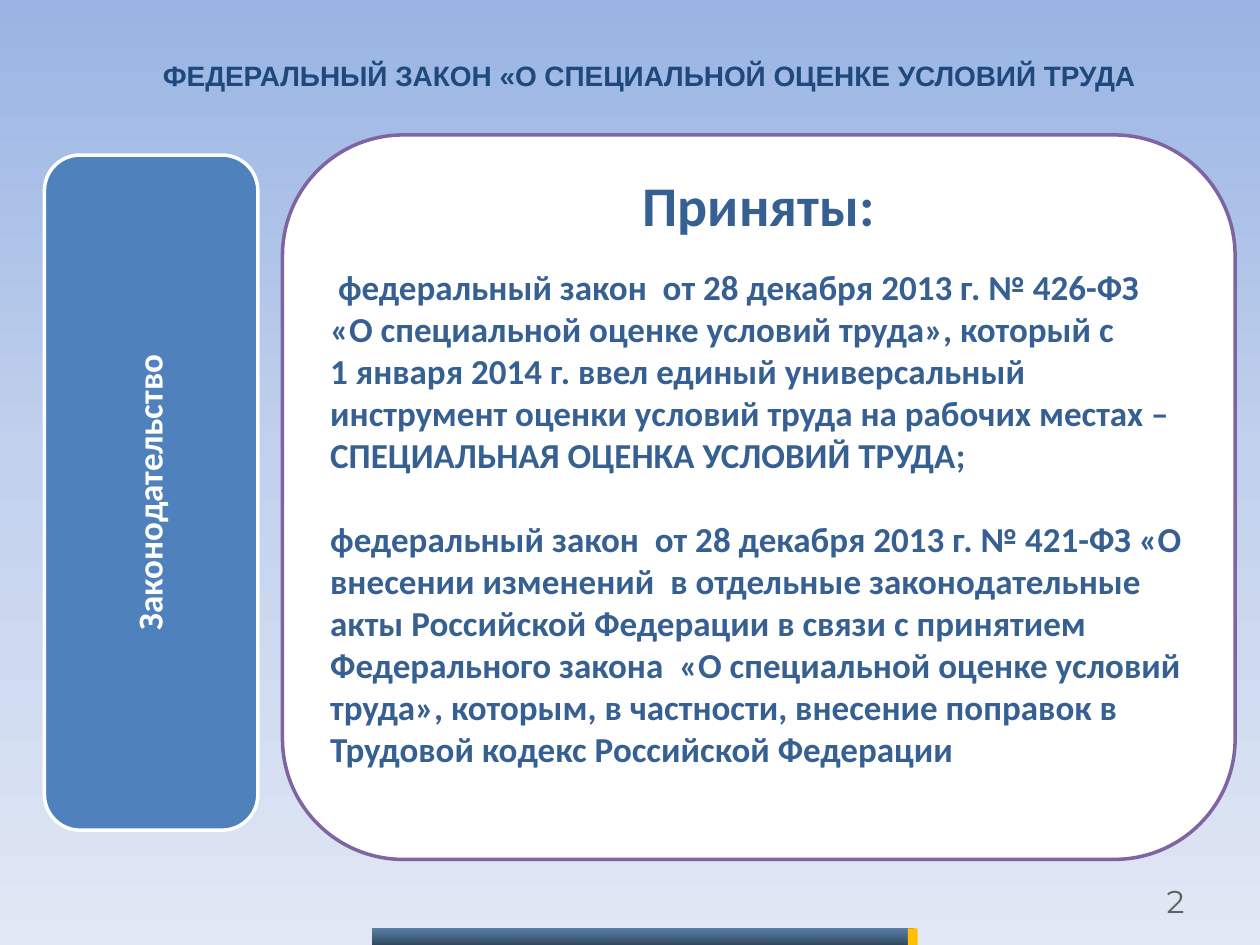
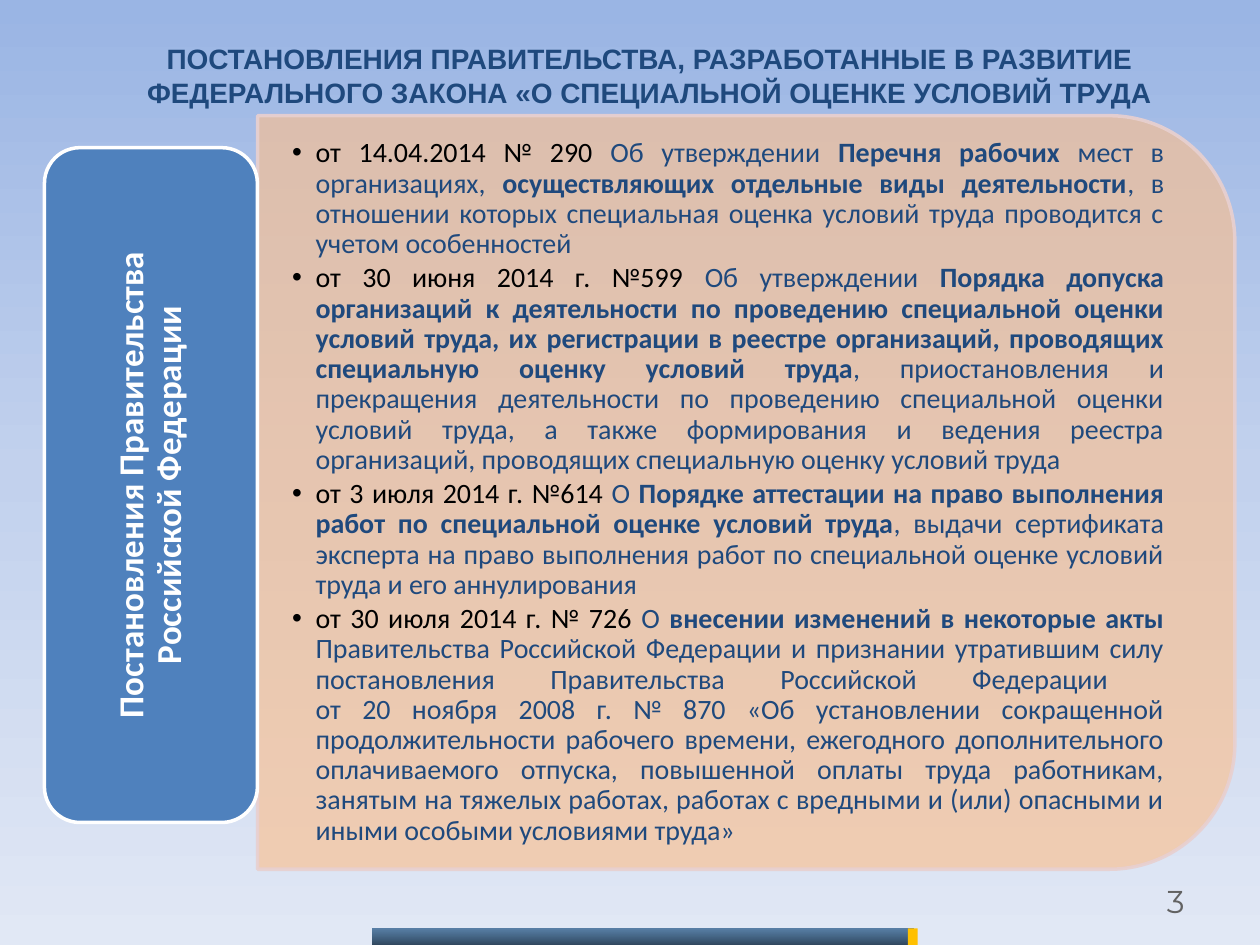
import copy

import pptx
import pptx.util
import pptx.dml.color
import pptx.enum.shapes
import pptx.enum.text
import pptx.oxml.ns
from lxml import etree

Pt = pptx.util.Pt
RGBColor = pptx.dml.color.RGBColor
KIND = pptx.enum.shapes.MSO_SHAPE
ALIGN = pptx.enum.text.PP_ALIGN
ANCHOR = pptx.enum.text.MSO_ANCHOR
qn = pptx.oxml.ns.qn

SKY = [RGBColor(0x9A, 0xB5, 0xE4), RGBColor(0xC2, 0xD1, 0xED), RGBColor(0xE1, 0xE8, 0xF5)]
BAND = [RGBColor(0x00, 0x3C, 0x73), RGBColor(0x00, 0x1C, 0x35)]
GOLD = RGBColor(0xFF, 0xC0, 0x00)
NAVY = RGBColor(0x1F, 0x49, 0x7D)
STEEL = RGBColor(0x37, 0x60, 0x92)
BLUE = RGBColor(0x4F, 0x81, 0xBD)
PURPLE = RGBColor(0x80, 0x64, 0xA2)
PEACH = RGBColor(0xFA, 0xC0, 0x90)
ROSE = RGBColor(0xE8, 0xD0, 0xD0)
GREY = RGBColor(0x62, 0x62, 0x62)
WHITE = RGBColor(0xFF, 0xFF, 0xFF)
BLACK = RGBColor(0x00, 0x00, 0x00)

TITLE = (22.3, 26.1, 697.7, 33.8)
NUMBER = (643.7, 500.4, 40.3, 28.8)
FOOTER = (212.8, 530.6, 311.6, 9.4)

LAWS = [
    "федеральный закон  от 28 декабря 2013 г. № 426-ФЗ «О специальной оценке условий труда», "
    "который с\v1 января 2014 г. ввел единый универсальный инструмент оценки условий труда "
    "на рабочих местах – СПЕЦИАЛЬНАЯ ОЦЕНКА УСЛОВИЙ ТРУДА;",
    "федеральный закон  от 28 декабря 2013 г. № 421-ФЗ «О внесении изменений  в отдельные "
    "законодательные акты Российской Федерации в связи с принятием Федерального закона  "
    "«О специальной оценке условий труда», которым, в частности, внесение поправок в Трудовой "
    "кодекс Российской Федерации",
]

ACTS = [
    ("от 14.04.2014 № 290 ", "Об утверждении ",
     ["Перечня рабочих", " мест в организациях, ", "осуществляющих отдельные виды деятельности",
      ", в отношении которых специальная оценка условий труда проводится с учетом особенностей"]),
    ("от 30 июня 2014 г. №599 ", "Об утверждении ",
     ["Порядка допуска организаций к деятельности по проведению специальной оценки условий труда, "
      "их регистрации в реестре организаций, проводящих специальную оценку условий труда",
      ", приостановления и прекращения деятельности по проведению специальной оценки условий труда, "
      "а также формирования и ведения реестра организаций, проводящих специальную оценку условий труда"]),
    ("от 3 июля 2014 г. №614 ", "О ",
     ["Порядке аттестации на право выполнения работ по специальной оценке условий труда",
      ", выдачи сертификата эксперта на право выполнения работ по специальной оценке условий труда "
      "и его аннулирования"]),
    ("от 30 июля 2014 г. № 726 ", "О ",
     ["внесении изменений в некоторые акты ",
      "Правительства Российской Федерации и признании утратившим силу постановления "
      "Правительства Российской Федерации \vот 20 ноября 2008 г. № 870 «Об установлении сокращенной "
      "продолжительности рабочего времени, ежегодного дополнительного оплачиваемого отпуска, "
      "повышенной оплаты труда работникам, занятым на тяжелых работах, работах с вредными и (или) "
      "опасными и иными особыми условиями труда»"]),
]


def blend(fill, owner, tints):
    fill.gradient()
    fill.gradient_angle = 270
    stops = next(owner.iter(qn("a:gsLst")))
    for i in range(1, len(tints) - 1):
        stop = copy.deepcopy(stops[0])
        stop.set("pos", str(100000 * i // (len(tints) - 1)))
        stops.insert(i, stop)
    for stop, tint in zip(fill.gradient_stops, tints):
        stop.color.rgb = tint


def fade(shape, *parts):
    for tint, part in zip(shape.element.spPr.iter(qn("a:srgbClr")), parts):
        etree.SubElement(tint, qn("a:alpha")).set("val", str(part * 1000))


def block(slide, kind, box, fill=None, line=None):
    shape = slide.shapes.add_shape(kind, *map(Pt, box))
    shape.shadow.inherit = False
    if fill is not None:
        shape.fill.solid()
        shape.fill.fore_color.rgb = fill
    if line is None:
        shape.line.fill.background()
    else:
        shape.line.color.rgb = line
        shape.line.width = Pt(2)
    return shape


def style(run, size, color, bold=False, face="Calibri"):
    run.font.name = face
    run.font.size = Pt(size)
    run.font.bold = bold
    run.font.color.rgb = color


def indent(para, left, first):
    props = para._p.get_or_add_pPr()
    props.set("marL", str(Pt(left)))
    props.set("indent", str(Pt(first)))
    return props


def label(slide, box, text, align, *look):
    shape = slide.shapes.add_textbox(*map(Pt, box))
    frame = shape.text_frame
    frame.word_wrap = True
    frame.vertical_anchor = ANCHOR.MIDDLE
    frame.text = text
    para = frame.paragraphs[0]
    para.alignment = align
    for run in para.runs:
        style(run, *look)
    return shape


def footer(slide, box):
    x, y, w, h = box
    band = block(slide, KIND.RECTANGLE, (x, y, w - 2.2, h))
    blend(band.fill, band.element, BAND)
    fade(band, 60, 80)
    block(slide, KIND.RECTANGLE, (x + w - 5.6, y, 5.6, h), GOLD)


def base(deck, title, number):
    slide = deck.slides.add_slide(deck.slide_layouts[6])
    blend(slide.background.fill, slide.element, SKY)
    num = label(slide, NUMBER, str(number), ALIGN.RIGHT, 18, GREY, False, "Montserrat")
    num.text_frame.paragraphs[0].space_before = Pt(3.6)
    label(slide, TITLE, title, ALIGN.CENTER, 16, NAVY, True, "Arial")
    footer(slide, FOOTER)
    return slide


def topic(slide, box, text):
    x, y, w, h = box
    block(slide, KIND.ROUNDED_RECTANGLE, box, BLUE, WHITE)
    inner = (x + 6, y + 6, w - 12, h - 12)
    shape = label(slide, inner, text, ALIGN.CENTER, 20, WHITE, True)
    frame = shape.text_frame
    frame.margin_left = frame.margin_right = Pt(6)
    frame.margin_top = frame.margin_bottom = Pt(3)
    frame.paragraphs[0].line_spacing = 0.9
    shape.element.txBody.bodyPr.set("vert", "vert270")


def laws(slide, box):
    frame = block(slide, KIND.ROUNDED_RECTANGLE, box, WHITE, PURPLE).text_frame
    frame.word_wrap = True
    frame.vertical_anchor = ANCHOR.TOP
    frame.margin_top = frame.margin_bottom = 0
    frame.text = "\n".join(["Приняты:"] + LAWS)
    looks = [(ALIGN.CENTER, 32, 16), (ALIGN.LEFT, 20, 24), (ALIGN.LEFT, 20, 0)]
    for para, (align, size, gap) in zip(frame.paragraphs, looks):
        para.alignment = align
        para.space_after = Pt(gap)
        for run in para.runs:
            style(run, size, STEEL, True)
    indent(frame.paragraphs[1], 0, 4.5)


def act(para, date, verb, parts):
    para.alignment = ALIGN.JUSTIFY
    para.line_spacing = 0.9
    para.space_after = Pt(2.4)
    props = indent(para, 13.5, -13.5)
    etree.SubElement(props, qn("a:buFont")).set("typeface", "Arial")
    etree.SubElement(props, qn("a:buChar")).set("char", "•")
    runs = [(date, BLACK, False), (verb, NAVY, False)]
    runs += [(part, NAVY, i % 2 == 0) for i, part in enumerate(parts)]
    for text, color, bold in runs:
        for i, piece in enumerate(text.split("\v")):
            if i:
                para.add_line_break()
            run = para.add_run()
            run.text = piece
            style(run, 16, color, bold)


def acts(slide, box):
    x, y, w, h = box
    turned = (x + (w - h) / 2, y + (h - w) / 2, h, w)
    panel = block(slide, KIND.ROUND_2_SAME_RECTANGLE, turned, PEACH, ROSE)
    panel.rotation = 90
    fade(panel, 65, 90)
    frame = slide.shapes.add_textbox(*map(Pt, (x + 0.2, y + 21, w - 21, h - 42))).text_frame
    frame.word_wrap = True
    frame.vertical_anchor = ANCHOR.MIDDLE
    frame.margin_left = frame.margin_right = Pt(19.5)
    frame.margin_top = frame.margin_bottom = Pt(10)
    for i, item in enumerate(ACTS):
        act(frame.add_paragraph() if i else frame.paragraphs[0], *item)


def main():
    deck = pptx.Presentation()
    deck.slide_width, deck.slide_height = Pt(720), Pt(540)
    slide = base(deck, "ФЕДЕРАЛЬНЫЙ ЗАКОН «О СПЕЦИАЛЬНОЙ ОЦЕНКЕ УСЛОВИЙ ТРУДА", 2)
    topic(slide, (25.4, 88.6, 122, 385.8), "Законодательство")
    laws(slide, (161.4, 77.1, 544.4, 414))
    slide = base(deck, "ПОСТАНОВЛЕНИЯ ПРАВИТЕЛЬСТВА, РАЗРАБОТАННЫЕ В РАЗВИТИЕ "
                 "ФЕДЕРАЛЬНОГО ЗАКОНА «О СПЕЦИАЛЬНОЙ ОЦЕНКЕ УСЛОВИЙ ТРУДА", 3)
    acts(slide, (147.2, 66.1, 558.4, 430.6))
    topic(slide, (25.4, 84.4, 121.7, 385.6), "Постановления Правительства Российской Федерации")
    deck.save("out.pptx")


if __name__ == "__main__":
    main()
